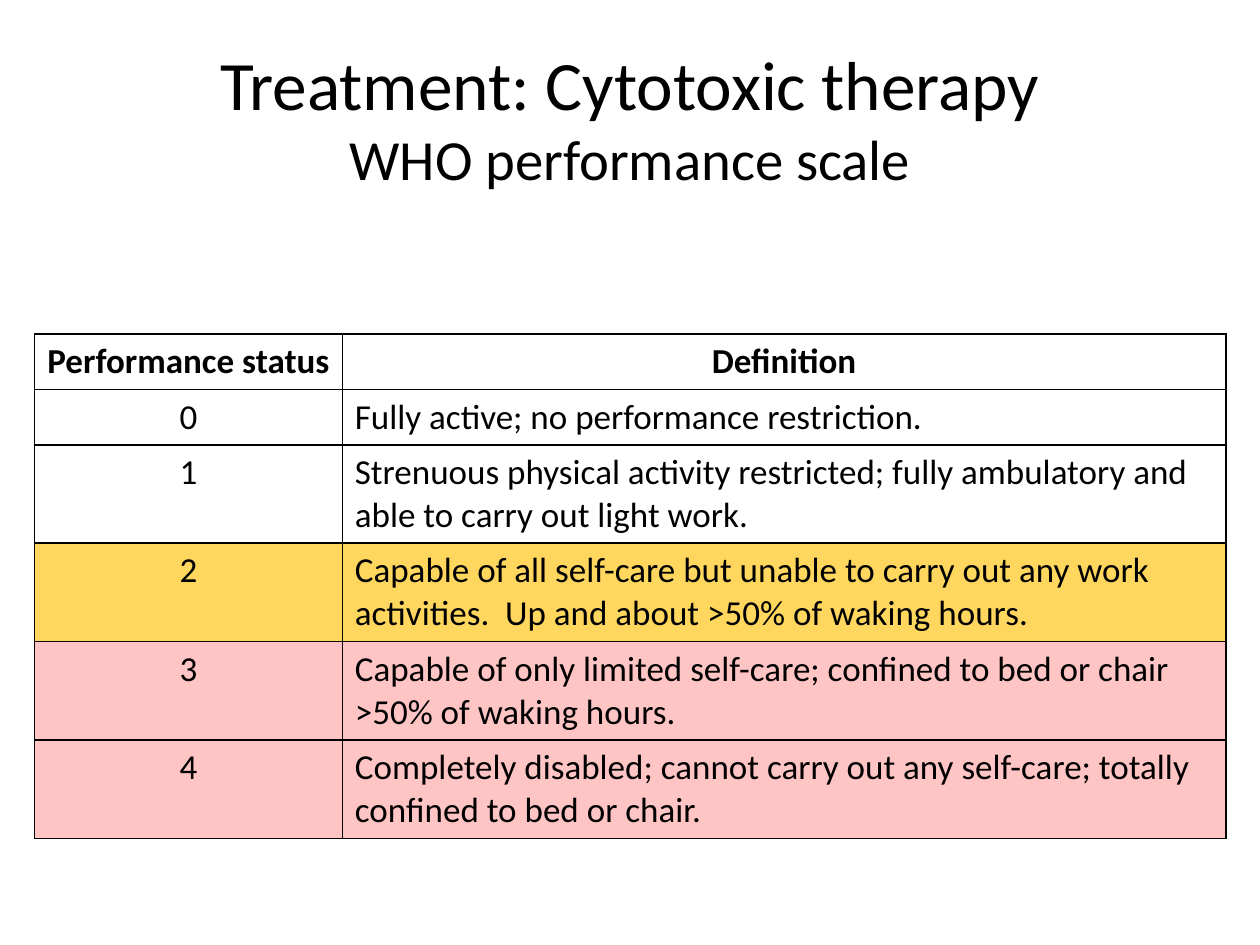
from lxml import etree
from pptx import Presentation
from pptx import util as u
from pptx.dml.color import RGBColor
from pptx.enum import text
from pptx.oxml.ns import qn

BLACK, AMBER, RED = "000000", "FFC000", "FF0000"
LEFT, MID = text.PP_ALIGN.LEFT, text.PP_ALIGN.CENTER

# status, definition, row height in cm, fill as (colour, opacity in percent)
SCALE = [
    ("Performance status", "Definition", 1.04, None),
    ("0", "Fully active; no performance restriction.", 1.04, None),
    ("1", "Strenuous physical activity restricted; fully ambulatory and "
          "able to carry out light work.", 1.98, None),
    ("2", "Capable of all self-care but unable to carry out any work "
          "activities.  Up and about >50% of waking hours.", 1.98, (AMBER, 63)),
    ("3", "Capable of only limited self-care; confined to bed or chair "
          ">50% of waking hours.", 1.98, (RED, 23)),
    ("4", "Completely disabled; cannot carry out any self-care; totally "
          "confined to bed or chair.", 1.98, (RED, 23)),
]


def color(code):
    return RGBColor.from_string(code)


class Deck:
    face = "Calibri"
    ink = BLACK
    size = 20

    def __init__(self, wide, high):
        self.file = Presentation()
        self.file.slide_width, self.file.slide_height = u.Cm(wide), u.Cm(high)
        self.slide = self.file.slides.add_slide(self.file.slide_layouts[5])

    def style(self, font, size, bold=False):
        font.name, font.size, font.bold = self.face, u.Pt(size), bold
        font.color.rgb = color(self.ink)

    def title(self, box, lines):
        """Fill the title with (wording, size) lines in one paragraph."""
        shape = self.slide.shapes.title
        shape.left, shape.top, shape.width, shape.height = map(u.Cm, box)
        frame = shape.text_frame
        frame.auto_size = text.MSO_AUTO_SIZE.NONE
        frame.vertical_anchor = text.MSO_ANCHOR.MIDDLE
        para = frame.paragraphs[0]
        para.alignment = MID
        for i, (words, size) in enumerate(lines):
            if i:
                para.add_line_break()
            run = para.add_run()
            run.text = words
            self.style(run.font, size)

    def table(self, left, top, widths, rows):
        high = sum(row[2] for row in rows)
        grid = self.slide.shapes.add_table(
            len(rows), len(widths), u.Cm(left), u.Cm(top),
            u.Cm(sum(widths)), u.Cm(high)).table
        grid.horz_banding = False
        for col, width in zip(grid.columns, widths):
            col.width = u.Cm(width)
        for r, (status, meaning, height, fill) in enumerate(rows):
            grid.rows[r].height = u.Cm(height)
            for c, words in enumerate((status, meaning)):
                cell = grid.cell(r, c)
                cell.text = words
                para = cell.text_frame.paragraphs[0]
                para.alignment = LEFT if r and c else MID
                self.style(para.font, self.size, bold=r == 0)
                self.paint(cell, fill)
                self.edge(cell)

    def paint(self, cell, fill):
        if fill is None:
            cell.fill.background()
            return
        code, alpha = fill
        cell.fill.solid()
        cell.fill.fore_color.rgb = color(code)
        tint = cell._tc.tcPr.find(".//" + qn("a:srgbClr"))
        etree.SubElement(tint, qn("a:alpha"), val=str(alpha * 1000))

    def edge(self, cell):
        """Draw a 1 pt line on all four sides of a cell."""
        props = cell._tc.get_or_add_tcPr()
        for i, side in enumerate(("lnL", "lnR", "lnT", "lnB")):
            line = etree.Element(qn("a:" + side), w=str(u.Pt(1)))
            solid = etree.SubElement(line, qn("a:solidFill"))
            etree.SubElement(solid, qn("a:srgbClr"), val=self.ink)
            props.insert(i, line)

    def save(self):
        self.file.save("out.pptx")


def main():
    deck = Deck(25.4, 19.05)
    deck.title((1.27, 0.76, 22.86, 3.18),
               [("Treatment: Cytotoxic therapy", 39.6),
                ("WHO performance scale", 32.4)])
    deck.table(0.7, 6.73, (6.2, 17.81), SCALE)
    deck.save()


if __name__ == "__main__":
    main()
